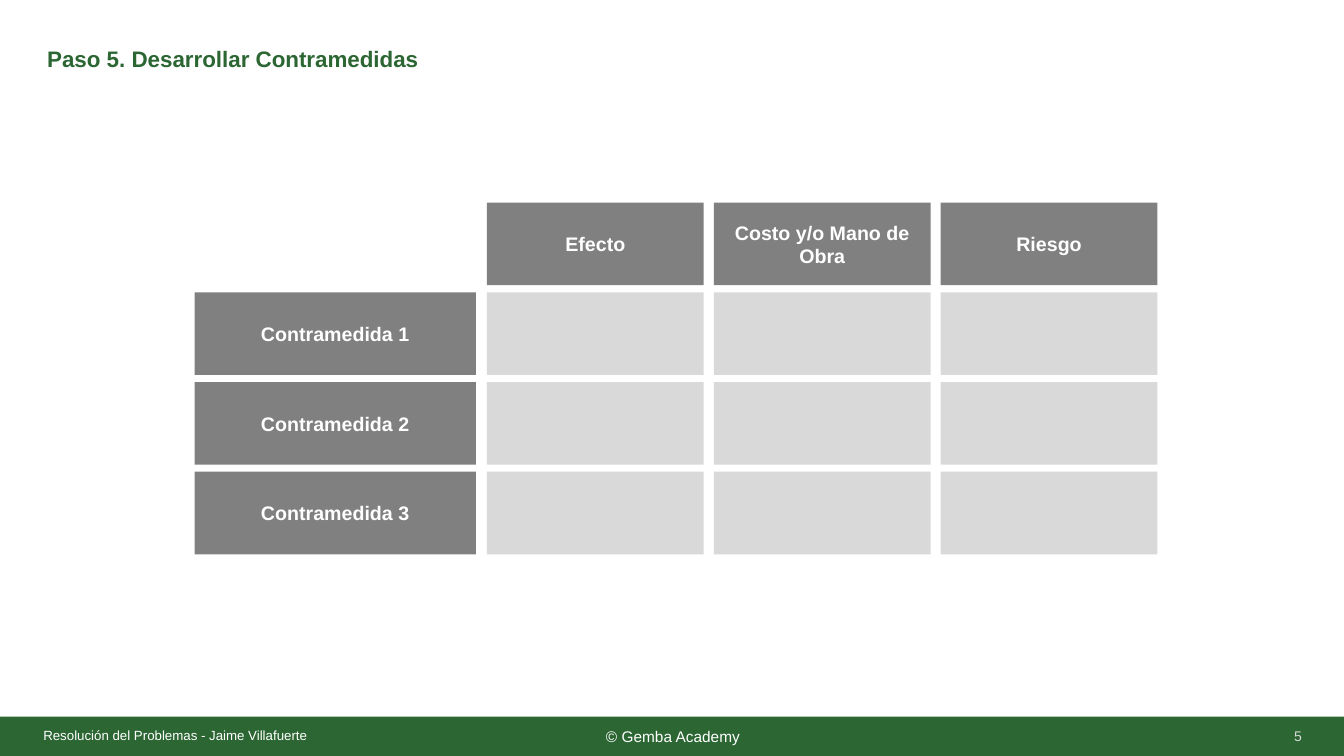
"""Build the countermeasure evaluation slide."""
from pptx import Presentation
from pptx import util as u
from pptx.dml.color import RGBColor
from pptx.enum import shapes, text

TITLE = "Paso 5. Desarrollar Contramedidas"
AUTHOR = "Resolución del Problemas - Jaime Villafuerte"
COPYRIGHT = "© Gemba Academy"
PAGE_NUMBER = "5"
CRITERIA = ["Efecto", "Costo y/o Mano de Obra", "Riesgo"]
COUNTERMEASURES = ["Contramedida 1", "Contramedida 2", "Contramedida 3"]

GREEN, GRAY, LIGHT, WHITE = "2B6633", "808080", "D9D9D9", "FFFFFF"
LABEL_LEFT, LABEL_WIDTH = 1.93, 2.79
GRID_LEFT, GRID_TOP = 4.83, 2.01
CELL_WIDTH, CELL_HEIGHT = 2.15, 0.82
COLUMN_STEP, ROW_STEP = 2.25, 0.89
LEFT, CENTER, RIGHT = text.PP_ALIGN.LEFT, text.PP_ALIGN.CENTER, text.PP_ALIGN.RIGHT


def color(value):
    return RGBColor.from_string(value)


def write(box, words, size, fill=WHITE, bold=False, align=CENTER):
    frame = box.text_frame
    frame.word_wrap = True
    frame.vertical_anchor = text.MSO_ANCHOR.MIDDLE
    frame.text = words
    para = frame.paragraphs[0]
    para.alignment = align
    span = para.runs[0]
    span.font.name = "Arial"
    span.font.size = u.Pt(size)
    span.font.bold = bold
    span.font.color.rgb = color(fill)
    return para


def add_block(page, left, top, width, height, fill):
    block = page.shapes.add_shape(
        shapes.MSO_SHAPE.RECTANGLE, *map(u.Inches, (left, top, width, height)))
    block.shadow.inherit = False
    block.fill.solid()
    block.fill.fore_color.rgb = color(fill)
    block.line.fill.background()
    return block


def add_text(page, left, top, width, height):
    return page.shapes.add_textbox(*map(u.Inches, (left, top, width, height)))


def add_frame(page):
    write(add_block(page, 0, 7.11, 13.35, 0.4, GREEN), COPYRIGHT, 11)
    title = write(add_text(page, 0.37, 0.34, 11.5, 0.52), TITLE, 16, GREEN, True, LEFT)
    title.line_spacing = 0.9
    author = add_text(page, 0.43, 7.17, 3, 0.24)
    write(author, AUTHOR, 9.5, align=LEFT)
    frame = author.text_frame
    frame.margin_left = frame.margin_right = frame.margin_top = frame.margin_bottom = 0
    write(add_text(page, 10.01, 7.1, 3, 0.4), PAGE_NUMBER, 10, LIGHT, align=RIGHT)


def add_matrix(page):
    for row, name in enumerate(COUNTERMEASURES, 1):
        top = GRID_TOP + row * ROW_STEP
        label = add_block(page, LABEL_LEFT, top, LABEL_WIDTH, CELL_HEIGHT, GRAY)
        write(label, name, 14, bold=True)
    for column, name in enumerate(CRITERIA):
        left = GRID_LEFT + column * COLUMN_STEP
        header = add_block(page, left, GRID_TOP, CELL_WIDTH, CELL_HEIGHT, GRAY)
        write(header, name, 14, bold=True).space_after = u.Pt(6)
        for row in range(1, len(COUNTERMEASURES) + 1):
            top = GRID_TOP + row * ROW_STEP
            add_block(page, left, top, CELL_WIDTH, CELL_HEIGHT, LIGHT)


def main():
    deck = Presentation()
    deck.slide_width, deck.slide_height = u.Inches(13.33), u.Inches(7.5)
    page = deck.slides.add_slide(deck.slide_layouts[6])
    add_frame(page)
    add_matrix(page)
    deck.save("out.pptx")


if __name__ == "__main__":
    main()
